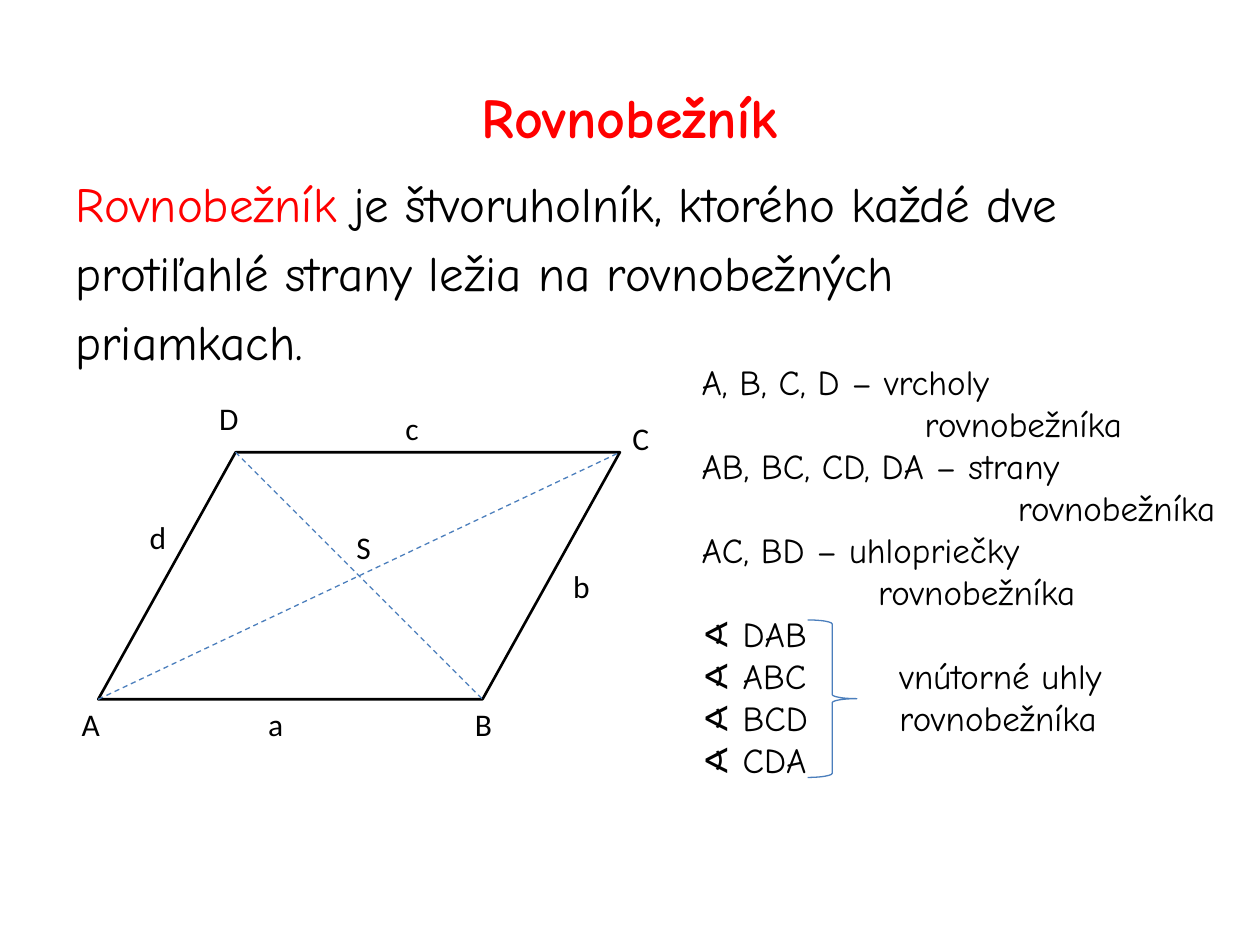
from dataclasses import dataclass

from lxml.etree import SubElement
from pptx import Presentation
from pptx.dml.color import RGBColor
from pptx.enum.dml import MSO_LINE
from pptx.enum.shapes import MSO_CONNECTOR, MSO_SHAPE
from pptx.enum.text import MSO_AUTO_SIZE, PP_ALIGN
from pptx.oxml.ns import qn
from pptx.util import Inches, Pt


@dataclass(frozen=True)
class Theme:
    accent: RGBColor = RGBColor(0xFF, 0x00, 0x00)
    ink: RGBColor = RGBColor(0x00, 0x00, 0x00)
    guide: RGBColor = RGBColor(0x4B, 0x7E, 0xBC)
    text_font: str = "Comic Neue"
    label_font: str = "Calibri"
    title_size: int = 32
    body_size: int = 28
    legend_size: int = 20
    label_size: int = 18
    thick: float = 1.5
    thin: float = 0.75


class SlideBuilder:
    def __init__(self, page, theme):
        self.page = page
        self.theme = theme

    def style(self, font, name, size, color):
        font.name = name
        font.size = Pt(size)
        font.color.rgb = color

    def place(self, box, left, top, width, height):
        box.left, box.top = Inches(left), Inches(top)
        box.width, box.height = Inches(width), Inches(height)

    def title(self, text, *area):
        box = self.page.shapes.title
        self.place(box, *area)
        para = box.text_frame.paragraphs[0]
        para.text = text
        para.alignment = PP_ALIGN.CENTER
        self.style(para.font, self.theme.text_font, self.theme.title_size, self.theme.accent)
        para.font.bold = True

    def body(self, lines, *area):
        """Each line is a list of (text, color) spans."""
        box = self.page.placeholders[1]
        self.place(box, *area)
        frame = box.text_frame
        for index, spans in enumerate(lines):
            para = frame.add_paragraph() if index else frame.paragraphs[0]
            SubElement(para._p.get_or_add_pPr(), qn("a:buNone"))
            for text, color in spans:
                span = para.add_run()
                span.text = text
                self.style(span.font, self.theme.text_font, self.theme.body_size, color)

    def label(self, text, left, top):
        box = self.page.shapes.add_textbox(Inches(left), Inches(top), Inches(0.34), Inches(0.4))
        frame = box.text_frame
        frame.word_wrap = False
        frame.auto_size = MSO_AUTO_SIZE.SHAPE_TO_FIT_TEXT
        para = frame.paragraphs[0]
        para.text = text
        self.style(para.font, self.theme.label_font, self.theme.label_size, self.theme.ink)

    def legend(self, lines, tab, *area):
        """Each line is (text, left indent); tabs in the text stop at one column."""
        box = self.page.shapes.add_textbox(*map(Inches, area))
        frame = box.text_frame
        frame.word_wrap = True
        for index, (text, indent) in enumerate(lines):
            para = frame.add_paragraph() if index else frame.paragraphs[0]
            para.add_run().text = text
            properties = para._p.get_or_add_pPr()
            if indent:
                properties.set("marL", str(Inches(indent)))
            if "\t" in text:
                stops = SubElement(properties, qn("a:tabLst"))
                SubElement(stops, qn("a:tab"), pos=str(Inches(tab)), algn="l")
            self.style(para.font, self.theme.text_font, self.theme.legend_size, self.theme.ink)

    def outline(self, kind, color, weight, *area):
        shape = self.page.shapes.add_shape(kind, *map(Inches, area))
        shape.shadow.inherit = False
        shape.fill.background()
        shape.line.color.rgb = color
        shape.line.width = Pt(weight)
        return shape

    def dashed_line(self, start, end):
        line = self.page.shapes.add_connector(
            MSO_CONNECTOR.STRAIGHT, *map(Inches, (*start, *end)))
        line.line.color.rgb = self.theme.guide
        line.line.width = Pt(self.theme.thin)
        line.line.dash_style = MSO_LINE.DASH
        SubElement(line._element.spPr, qn("a:effectLst"))


def main():
    deck = Presentation()
    deck.slide_width, deck.slide_height = Inches(10), Inches(7.5)
    theme = Theme()
    slide = SlideBuilder(deck.slides.add_slide(deck.slide_layouts[1]), theme)

    # Heading and definition
    slide.title("Rovnobežník", 0.5, 0.3, 9, 1.25)
    slide.body([
        [("Rovnobežník", theme.accent),
         (" je štvoruholník, ktorého každé dve", theme.ink)],
        [("protiľahlé strany ležia na rovnobežných", theme.ink)],
        [("priamkach.", theme.ink)],
    ], 0.5, 1.33, 9, 5.37)

    # Parallelogram with its diagonals
    left, top, right, bottom, slant = 0.78, 3.59, 4.92, 5.55, 1.09
    height = bottom - top
    figure = slide.outline(MSO_SHAPE.PARALLELOGRAM, theme.ink, theme.thick,
                           left, top, right - left, height)
    figure.adjustments[0] = slant / height
    slide.dashed_line((left + slant, top), (right - slant, bottom))
    slide.dashed_line((left, bottom), (right, top))

    # Vertices, centre and sides
    for text, x, y in [
        ("A", 0.55, bottom), ("B", 3.67, bottom), ("C", right, 3.28), ("D", 1.64, 3.12),
        ("S", 2.73, 4.14),
        ("a", 2.03, bottom), ("b", 4.45, 4.45), ("c", 3.12, 3.2), ("d", 1.09, 4.06),
    ]:
        slide.label(text, x, y)

    # Names of the parts
    slide.legend([
        ("A, B, C, D – vrcholy", 0),
        ("rovnobežníka", 1.77),
        ("AB, BC, CD, DA – strany", 0),
        ("rovnobežníka", 2.51),
        ("AC, BD – uhlopriečky", 0),
        ("rovnobežníka", 1.4),
        ("∢ DAB", 0),
        ("∢ ABC\tvnútorné uhly", 0),
        ("∢ BCD\trovnobežníka", 0),
        ("∢ CDA", 0),
    ], 1.57, 5.47, 2.81, 4.42, 4.14)
    slide.outline(MSO_SHAPE.RIGHT_BRACE, theme.guide, theme.thin, 6.41, 4.92, 0.39, 1.25)

    deck.save("out.pptx")


if __name__ == "__main__":
    main()
